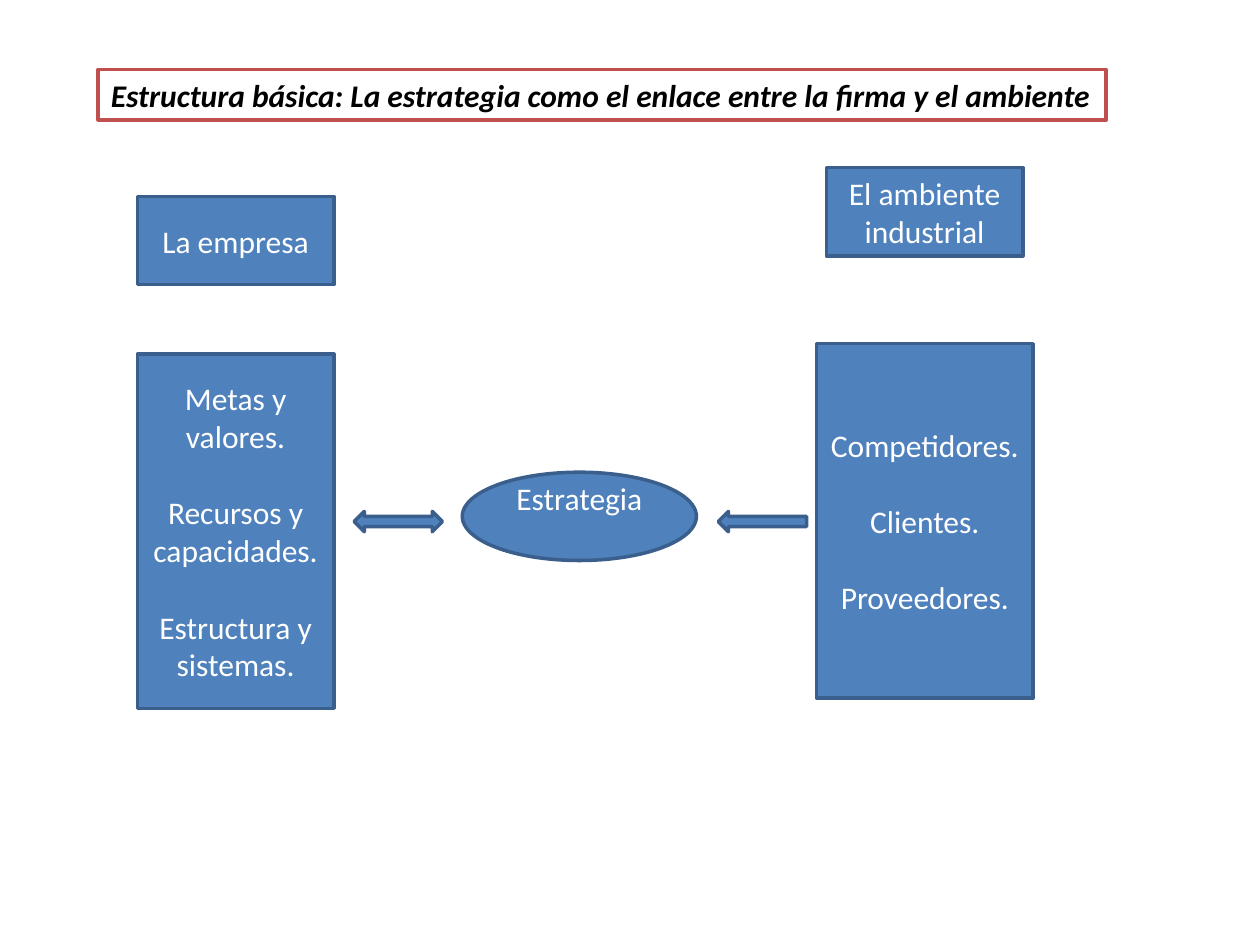
from dataclasses import dataclass

from pptx import Presentation
from pptx.dml.color import RGBColor
from pptx.enum.shapes import MSO_SHAPE as Preset
from pptx.enum.text import MSO_ANCHOR as Anchor, MSO_AUTO_SIZE as AutoSize, PP_ALIGN as Align
from pptx.util import Cm, Pt

BLUE, DARK_BLUE, RED = "4F81BD", "3A5F8C", "C0504D"
WHITE, BLACK = "FFFFFF", "000000"
LABEL_HEIGHT = 1.78
LIST_HEIGHT = 7.14
ARROW_TOP, ARROW_WIDTH, ARROW_HEIGHT = 10.31, 1.78, 0.41


@dataclass(frozen=True)
class Block:
    """A filled shape, measured in centimetres, with one paragraph per line."""
    left: float
    top: float
    width: float
    height: float
    lines: tuple[str, ...] = ()
    preset: Preset = Preset.RECTANGLE
    top_inset: float = 0.13
    bottom_inset: float = 0.13


def color(value: str) -> RGBColor:
    return RGBColor.from_string(value)


def place(shape, left: float, top: float, width: float, height: float) -> None:
    shape.left, shape.top = Cm(left), Cm(top)
    shape.width, shape.height = Cm(width), Cm(height)


def paint(shape, fill: str, line: str) -> None:
    shape.fill.solid()
    shape.fill.fore_color.rgb = color(fill)
    shape.line.color.rgb = color(line)
    shape.line.width = Pt(2)


def write(frame, lines: tuple[str, ...], *, font_color: str = WHITE, align=Align.CENTER,
          bold: bool = False, italic: bool = False, gap: float = 22) -> None:
    """Write the lines as paragraphs, with a gap in points between them."""
    for index, line in enumerate(lines):
        paragraph = frame.paragraphs[0] if index == 0 else frame.add_paragraph()
        paragraph.alignment = align
        paragraph.space_before = Pt(gap if index else 0)
        run = paragraph.add_run()
        run.text = line
        run.font.name, run.font.size = "Calibri", Pt(18)
        run.font.bold, run.font.italic = bold, italic
        run.font.color.rgb = color(font_color)


def draw_block(slide, block: Block) -> None:
    shape = slide.shapes.add_shape(block.preset, 0, 0, 0, 0)
    place(shape, block.left, block.top, block.width, block.height)
    shape.shadow.inherit = False
    paint(shape, BLUE, DARK_BLUE)
    frame = shape.text_frame
    frame.word_wrap = True
    frame.vertical_anchor = Anchor.MIDDLE
    frame.margin_top, frame.margin_bottom = Cm(block.top_inset), Cm(block.bottom_inset)
    write(frame, block.lines)


def draw_title(slide, text: str) -> None:
    title = slide.shapes.title
    place(title, 1.98, 1.4, 20.32, 1.02)
    paint(title, WHITE, RED)
    frame = title.text_frame
    frame.word_wrap = True
    frame.auto_size = AutoSize.NONE
    frame.vertical_anchor = Anchor.TOP
    frame.margin_right = Cm(0)  # keeps the title on one line
    write(frame, (text,), font_color=BLACK, align=Align.LEFT, bold=True, italic=True)


BLOCKS = (
    # The firm
    Block(2.77, 3.96, 3.96, LABEL_HEIGHT, ("La empresa",)),
    Block(2.77, 7.14, 3.96, LIST_HEIGHT,
          ("Metas y valores.", "Recursos y capacidades.", "Estructura y sistemas.")),
    # The strategy that links both sides
    Block(9.32, 9.52, 4.72, LABEL_HEIGHT, ("Estrategia",), Preset.OVAL,
          top_inset=-0.12, bottom_inset=0.62),
    # The industry environment
    Block(16.66, 3.38, 3.96, LABEL_HEIGHT, ("El ambiente industrial",)),
    Block(16.46, 6.93, 4.37, LIST_HEIGHT, ("Competidores.", "Clientes.", "Proveedores.")),
    # Arrows
    Block(7.14, ARROW_TOP, ARROW_WIDTH, ARROW_HEIGHT, preset=Preset.LEFT_RIGHT_ARROW),
    Block(14.48, ARROW_TOP, ARROW_WIDTH, ARROW_HEIGHT, preset=Preset.LEFT_ARROW),
)


def main() -> None:
    presentation = Presentation()
    presentation.slide_width, presentation.slide_height = Cm(25.4), Cm(19.05)
    slide = presentation.slides.add_slide(presentation.slide_layouts.get_by_name("Title Only"))
    draw_title(slide, "Estructura básica: La estrategia como el enlace entre la firma y el ambiente")
    for block in BLOCKS:
        draw_block(slide, block)
    presentation.save("out.pptx")


if __name__ == "__main__":
    main()
